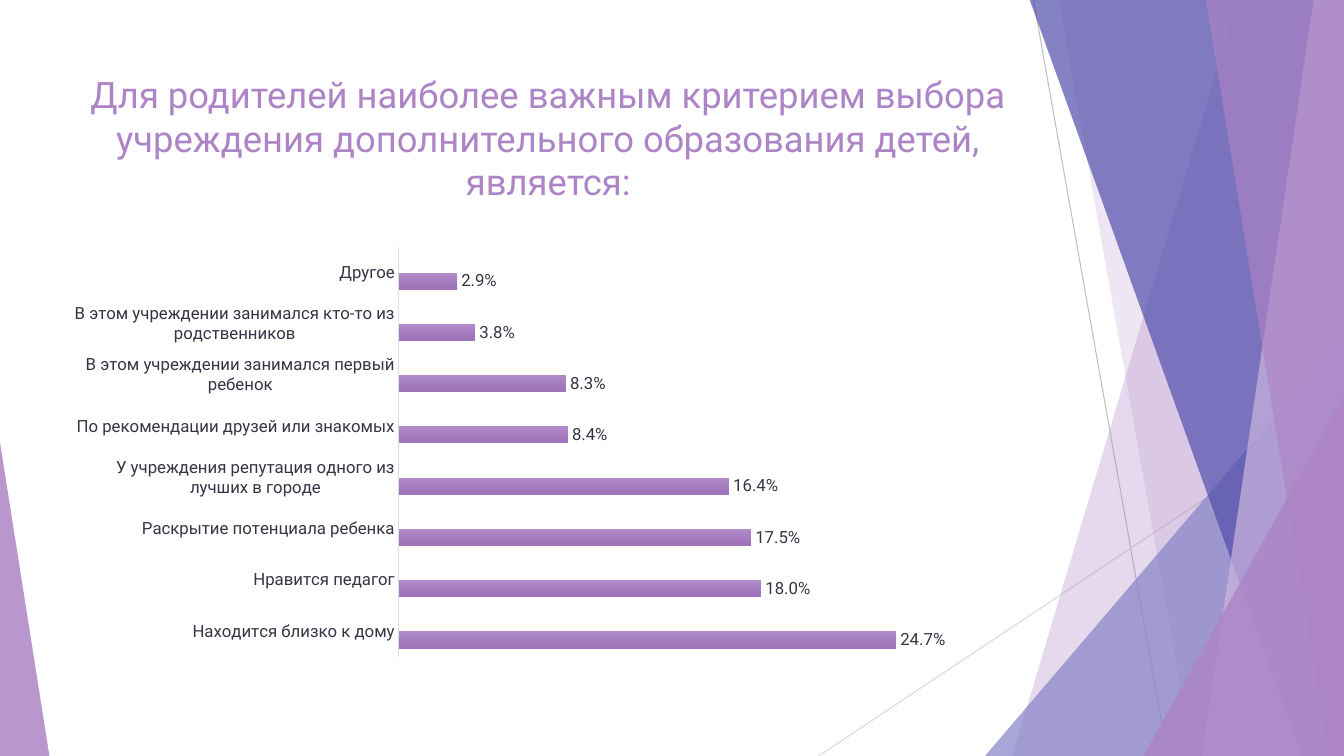
"""Build a slide with a bar chart of how parents choose an after-school centre."""
from dataclasses import dataclass
from typing import Union

from lxml.etree import Element, SubElement
from pptx import Presentation
from pptx.chart.data import CategoryChartData as ChartData
from pptx.dml.color import RGBColor
from pptx.enum.chart import XL_CHART_TYPE as Kind
from pptx.enum.chart import XL_LABEL_POSITION as Spot
from pptx.enum.chart import XL_TICK_MARK as Tick
from pptx.enum.shapes import MSO_CONNECTOR as Link
from pptx.enum.shapes import MSO_SHAPE as Form
from pptx.enum.text import MSO_ANCHOR as Anchor
from pptx.enum.text import MSO_AUTO_SIZE as Fit
from pptx.enum.text import PP_ALIGN as Align
from pptx.oxml.ns import qn
from pptx.util import Inches, Pt

WIDTH, HEIGHT = 13.33, 7.5
FONT = "Roboto"
LILAC = RGBColor(0xAD, 0x84, 0xC6)
PALE = RGBColor(0xCE, 0xB5, 0xDD)
BLUE = RGBColor(0x87, 0x84, 0xC7)
INDIGO = RGBColor(0x52, 0x4E, 0xAB)
INK = RGBColor(0x37, 0x35, 0x45)
BLACK = RGBColor(0, 0, 0)
RULE = RGBColor(0xDF, 0xDE, 0xE6)
GREY = RGBColor(0xBF, 0xBF, 0xBF)
SILVER = RGBColor(0xD9, 0xD9, 0xD9)
PURPLES = RGBColor(0xB1, 0x8C, 0xC9), RGBColor(0xA0, 0x74, 0xBA)
BLUES = RGBColor(0x8F, 0x8C, 0xCA), RGBColor(0x77, 0x73, 0xBB)

TITLE = ("Для родителей наиболее важным критерием выбора учреждения "
         "дополнительного образования детей, является:")
SHARES = {
    "Находится близко к дому": 0.247,
    "Нравится педагог": 0.18,
    "Раскрытие потенциала ребенка": 0.175,
    "У учреждения репутация одного из лучших в городе": 0.164,
    "По рекомендации друзей или знакомых": 0.084,
    "В этом учреждении занимался первый ребенок": 0.083,
    "В этом учреждении занимался кто-то из родственников": 0.038,
    "Другое": 0.029,
}
CHART = 0.74, 2.36, 9.4, 4.24
PLOT = 3.95, 2.45, 6.0, 4.07


@dataclass
class Ray:
    start: tuple[float, float]
    end: tuple[float, float]
    color: RGBColor


@dataclass
class Band:
    top: float
    base: float
    color: RGBColor
    alpha: int


@dataclass
class Wedge:
    left: float
    top: float
    width: float
    peak: int
    color: RGBColor
    alpha: int


RAYS = [
    Ray((10.25, 0), (11.58, HEIGHT), GREY),
    Ray((WIDTH, 4.03), (8.12, HEIGHT), SILVER),
]
FACETS = [
    Band(12.28, 10.04, LILAC, 30),
    Band(10.5, 11.83, LILAC, 20),
    Wedge(9.77, 3.33, 3.56, 1, BLUE, 72),
    Band(10.21, 12.91, INDIGO, 70),
    Band(13.03, 11.92, PALE, 70),
    Band(11.96, 13.18, LILAC, 65),
    Wedge(11.34, 3.93, 1.99, 1, LILAC, 80),
    Wedge(0, 4.39, 0.49, 0, LILAC, 85),
]


def style(font, size: int, color: RGBColor) -> None:
    for name, value in {"name": FONT, "size": Pt(size), "bold": False}.items():
        setattr(font, name, value)
    font.color.rgb = color


def draw_ray(slide, ray: Ray) -> None:
    ends = [Inches(value) for value in (*ray.start, *ray.end)]
    line = slide.shapes.add_connector(Link.STRAIGHT, *ends)
    line.line.color.rgb = ray.color
    line.line.width = Pt(0.75)
    SubElement(line.element.spPr, qn("a:effectLst"))


def draw_facet(slide, facet: Union[Band, Wedge]) -> None:
    if isinstance(facet, Band):
        pen = slide.shapes.build_freeform(Inches(facet.top), Inches(-0.01))
        edge = [(WIDTH, -0.01), (WIDTH, HEIGHT), (facet.base, HEIGHT)]
        pen.add_line_segments([(Inches(x), Inches(y)) for x, y in edge])
        shape = pen.convert_to_shape()
    else:
        box = facet.left, facet.top, facet.width, HEIGHT - facet.top
        shape = slide.shapes.add_shape(
            Form.ISOSCELES_TRIANGLE, *[Inches(value) for value in box])
        shape.adjustments[0] = facet.peak
    shape.shadow.inherit = False
    shape.fill.solid()
    shape.fill.fore_color.rgb = facet.color
    tone = shape.element.spPr.find(".//" + qn("a:srgbClr"))
    SubElement(tone, qn("a:alpha"), val=str(facet.alpha * 1000))
    shape.line.fill.background()


def set_title(slide) -> None:
    title = slide.shapes.title
    place = {"left": 0.74, "top": 0.67, "width": 9.4, "height": 1.44}
    for name, value in place.items():
        setattr(title, name, Inches(value))
    frame = title.text_frame
    frame.text = TITLE
    look = {"word_wrap": True, "auto_size": Fit.NONE,
            "vertical_anchor": Anchor.MIDDLE, "margin_bottom": Inches(0.1)}
    for name, value in look.items():
        setattr(frame, name, value)
    frame.paragraphs[0].alignment = Align.CENTER
    style(frame.paragraphs[0].runs[0].font, 26, LILAC)


def shade(series, tones: tuple[RGBColor, RGBColor]) -> None:
    fill = series.format.fill
    fill.gradient()
    fill.gradient_angle = 270
    for stop, tone, place in zip(fill.gradient_stops, tones, (0, 0.78)):
        stop.color.rgb = tone
        stop.position = place


def place_plot(chart) -> None:
    area = chart.element.find(".//" + qn("c:plotArea"))
    for old in area.findall(qn("c:layout")):
        area.remove(old)
    layout = Element(qn("c:layout"))
    area.insert(0, layout)
    manual = SubElement(layout, qn("c:manualLayout"))
    left, top, width, height = CHART
    x, y, w, h = PLOT
    rules = {"layoutTarget": "inner", "xMode": "edge", "yMode": "edge",
             "x": (x - left) / width, "y": (y - top) / height,
             "w": w / width, "h": h / height}
    for name, value in rules.items():
        SubElement(manual, qn(f"c:{name}"), val=str(value))


def add_bars(slide) -> None:
    data = ChartData(number_format="0.0%")
    data.categories = list(SHARES)
    data.add_series("Series 1", list(SHARES.values()))
    data.add_series("Series 2", [None] * len(SHARES))
    box = [Inches(value) for value in CHART]
    chart = slide.shapes.add_chart(Kind.BAR_CLUSTERED, *box, data).chart
    chart.has_legend = chart.has_title = False
    style(chart.font, 10, BLACK)
    place_plot(chart)

    names, scale = chart.category_axis, chart.value_axis
    marks = {"major_tick_mark": Tick.NONE, "minor_tick_mark": Tick.NONE,
             "has_major_gridlines": False}
    for axis in (names, scale):
        for name, value in marks.items():
            setattr(axis, name, value)
    limits = {"minimum_scale": 0, "maximum_scale": 0.3, "visible": False}
    for name, value in limits.items():
        setattr(scale, name, value)
    scale.tick_labels.number_format = "0%"
    scale.tick_labels.number_format_is_linked = False
    style(names.tick_labels.font, 12, INK)
    names.format.line.color.rgb = RULE
    names.format.line.width = Pt(0.75)

    plot = chart.plots[0]
    for name, value in {"gap_width": 100, "overlap": 0,
                        "vary_by_categories": False}.items():
        setattr(plot, name, value)
    for series, tones in zip(plot.series, (PURPLES, BLUES)):
        shade(series, tones)
    labels = plot.series[0].data_labels
    look = {"show_value": True, "number_format": "0.0%",
            "number_format_is_linked": False, "position": Spot.OUTSIDE_END}
    for name, value in look.items():
        setattr(labels, name, value)
    style(labels.font, 12, INK)


def main() -> None:
    deck = Presentation()
    deck.slide_width, deck.slide_height = Inches(WIDTH), Inches(HEIGHT)
    slide = deck.slides.add_slide(deck.slide_layouts[5])
    for ray in RAYS:
        draw_ray(slide, ray)
    for facet in FACETS:
        draw_facet(slide, facet)
    set_title(slide)
    add_bars(slide)
    deck.save("out.pptx")


if __name__ == "__main__":
    main()
